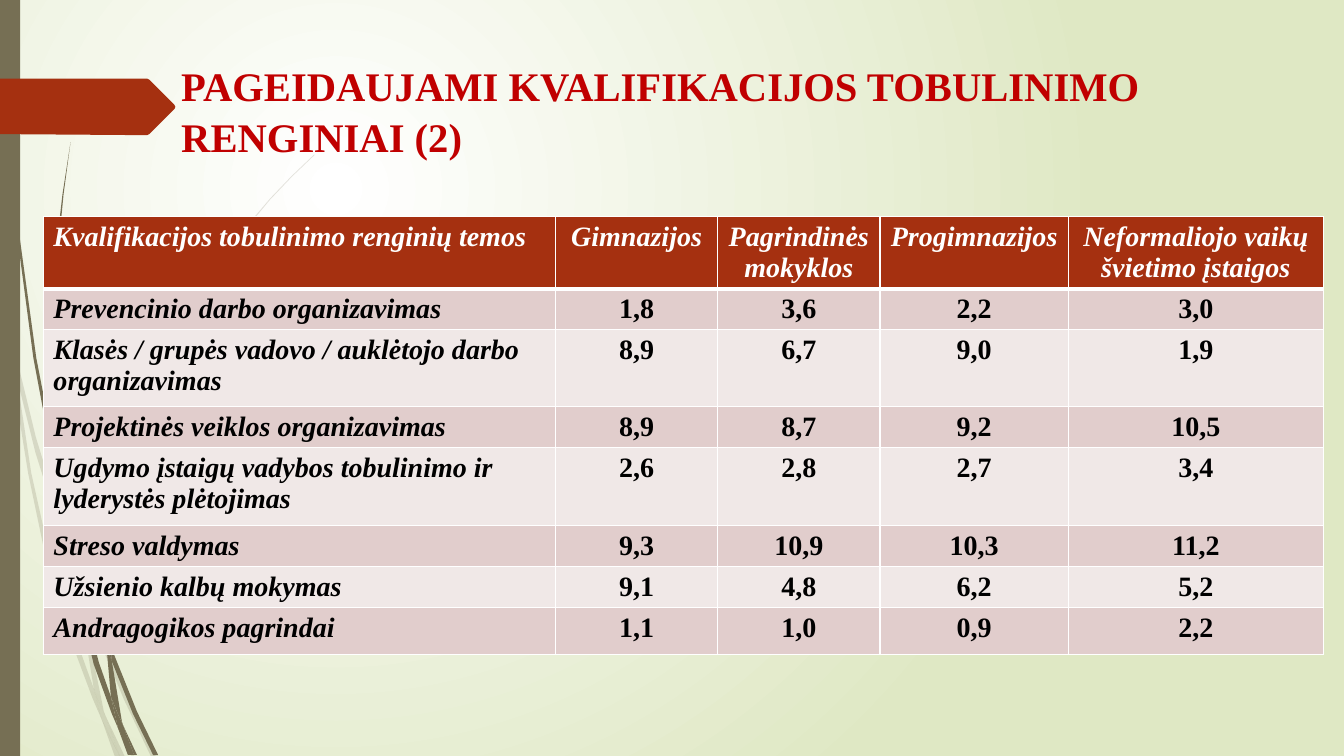
from dataclasses import dataclass
from pptx import Presentation, oxml, util as u
from pptx.dml.color import RGBColor
from pptx.enum import shapes, text
from pptx.oxml import ns


@dataclass
class Theme:
    """Colours and type sizes of the slide."""
    font: str = "Times New Roman"
    title: str = "C00000"
    accent: str = "A53010"
    stem: str = "766F54"
    glow: str = "FFFFFF"
    field: str = "DFE8C4"
    ink: str = "000000"
    rule: str = "FFFFFF"
    bands: tuple = ("E1CDCC", "F0E8E7")
    big: float = 29
    body: float = 20


class Deck:
    """Draws elements on one slide in the given theme."""

    def __init__(self, theme):
        self.theme = theme
        self.file = Presentation()
        self.file.slide_width, self.file.slide_height = u.Pt(960), u.Pt(540)
        self.slide = self.file.slides.add_slide(self.file.slide_layouts[6])

    def glow(self):
        """Fill the background with a round gradient."""
        fill = self.slide.background.fill
        fill.gradient()
        for stop, tint in zip(fill.gradient_stops, (self.theme.glow, self.theme.field)):
            stop.color.rgb = RGBColor.from_string(tint)
        grad = self.slide.element.find(".//" + ns.qn("a:gradFill"))
        grad.remove(grad.find(ns.qn("a:lin")))
        grad.append(oxml.parse_xml(
            f'<a:path {ns.nsdecls("a")} path="circle">'
            '<a:fillToRect l="50000" t="50000" r="100000" b="100000"/></a:path>'))

    def paint(self, shape, tint, alpha=100):
        """Give a shape a flat fill without line or shadow."""
        shape.shadow.inherit = False
        shape.line.fill.background()
        shape.fill.solid()
        shape.fill.fore_color.rgb = RGBColor.from_string(tint)
        if alpha < 100:
            clr = shape.element.spPr.find(f'{ns.qn("a:solidFill")}/{ns.qn("a:srgbClr")}')
            clr.append(oxml.parse_xml(f'<a:alpha {ns.nsdecls("a")} val="{alpha * 1000}"/>'))

    def bar(self, x, y, w, h, tint):
        """Add a plain rectangle."""
        shape = self.slide.shapes.add_shape(
            shapes.MSO_SHAPE.RECTANGLE, u.Pt(x), u.Pt(y), u.Pt(w), u.Pt(h))
        self.paint(shape, tint)

    def blade(self, dots, tint, alpha=100):
        """Add a closed outline through the dots."""
        first, *rest = [(u.Pt(x), u.Pt(y)) for x, y in dots]
        pen = self.slide.shapes.build_freeform(*first)
        pen.add_line_segments(rest, close=True)
        self.paint(pen.convert_to_shape(), tint, alpha)

    def type(self, para, size, tint, slant=False):
        """Set the font of a paragraph."""
        font = para.font
        font.name, font.size = self.theme.font, u.Pt(size)
        font.bold, font.italic = True, slant
        font.color.rgb = RGBColor.from_string(tint)

    def title(self, words, x, y, w, h):
        """Add the heading."""
        frame = self.slide.shapes.add_textbox(u.Pt(x), u.Pt(y), u.Pt(w), u.Pt(h)).text_frame
        frame.word_wrap = True
        frame.margin_top = u.Pt(5.5)
        frame.text = words
        para = frame.paragraphs[0]
        para.line_spacing = 1.05
        self.type(para, self.theme.big, self.theme.title)

    def edge(self, cell, base):
        """Rule the four sides of a cell."""
        props = cell._tc.get_or_add_tcPr()
        for spot, (side, width) in enumerate(zip("LRTB", (1, 1, 1, base))):
            props.insert(spot, oxml.parse_xml(
                f'<a:ln{side} {ns.nsdecls("a")} w="{u.Pt(width)}"><a:solidFill>'
                f'<a:srgbClr val="{self.theme.rule}"/></a:solidFill></a:ln{side}>'))

    def table(self, rows, x, y, wide, high):
        """Add a table with a dark head and banded rows."""
        grid = self.slide.shapes.add_table(
            len(rows), len(wide), u.Pt(x), u.Pt(y), u.Pt(sum(wide)), u.Pt(sum(high))).table
        for col, size in zip(grid.columns, wide):
            col.width = u.Pt(size)
        for line, size in zip(grid.rows, high):
            line.height = u.Pt(size)
        for r, row in enumerate(rows):
            head = r == 0
            for c, words in enumerate(row):
                cell = grid.cell(r, c)
                cell.text = words
                cell.margin_bottom = 0
                cell.fill.solid()
                cell.fill.fore_color.rgb = RGBColor.from_string(
                    self.theme.accent if head else self.theme.bands[(r - 1) % 2])
                para = cell.text_frame.paragraphs[0]
                para.alignment = text.PP_ALIGN.CENTER if c else text.PP_ALIGN.LEFT
                self.type(para, self.theme.body, self.theme.rule if head else self.theme.ink,
                          head or c == 0)
                self.edge(cell, 3 if head else 1)


PALE = [
    [(7.9, 252), (6.5, 231.8), (0, 203), (0, 215.3), (7.2, 247.7)],
    [(41.8, 375.8), (60.5, 431.3), (61.2, 421.9), (44.6, 374.4), (25.6, 312.2),
     (10.1, 248.4), (12.2, 270.7), (25.4, 323.5)],
    [(66.2, 437), (63.4, 429.1), (63.4, 439.2), (88.6, 499.7), (108, 540.7),
     (111.6, 540.7), (91.4, 498.2)],
    [(85.7, 540.7), (89.3, 540.7), (75.6, 511.9)],
    [(67, 491.8), (50.4, 445.7), (34.5, 392.4), (22.3, 337.7), (12.2, 270.7), (7.9, 252),
     (13.2, 295.2), (20.2, 338.4), (31.6, 393.1), (46.8, 447.1), (66.2, 499),
     (72.7, 514.1), (71.3, 509)],
    [(60.5, 431.3), (62.6, 465.1), (67, 491.8), (69.1, 498.2), (75.6, 511.9),
     (74.2, 508.3), (65.5, 465.1), (63.4, 439.2), (63.4, 437.8)],
    [(63.4, 420.5), (68.6, 375.8), (79.2, 332.6), (95.3, 290.9), (115.2, 251.3),
     (138.2, 213.1), (164.9, 176.4), (193, 142.6), (208.8, 126), (224.6, 110.9),
     (224.6, 110.2), (208.1, 126), (193, 141.8), (164.2, 175.7), (137.2, 212.4),
     (113.8, 250.6), (93.2, 290.2), (77, 331.9), (65.9, 375.8), (61.2, 420.5),
     (61.2, 421.9), (63.4, 429.1)],
    [(72.7, 514.1), (82.1, 540.7), (85.7, 540.7)],
    [(63.4, 437.8), (63.4, 439.2), (63.4, 429.1), (61.2, 421.9), (60.5, 431.3)],
    [(69.1, 498.2), (67, 491.8), (71.3, 509), (72.7, 514.1), (85.7, 540.7), (75.6, 511.9)],
]
DARK = [
    [(5, 79.2), (12.2, 167.8), (23.8, 255.6), (40.3, 343.4), (41, 346.3), (39.6, 329),
     (39.6, 326.2), (25.9, 255.6), (13.7, 167), (5.8, 78.5), (3.6, 34.6), (2.9, 0),
     (2.2, 0), (2.9, 34.6)],
    [(63.4, 426.2), (76.3, 464.4), (76.3, 454.3), (67, 424.8), (43.2, 339.8), (46.1, 363.6)],
    [(81.4, 467.3), (79.2, 461.5), (79.9, 472.3), (95, 509.8), (109.4, 539.3),
     (113, 539.3), (97.9, 508.3)],
    [(79.2, 497.5), (70.6, 473), (51.8, 400.3), (46.1, 363.6), (41, 343.4), (49, 401),
     (67, 474.5), (79.9, 509.8), (84.2, 519.8), (83.5, 516.2)],
    [(43.2, 339.8), (41.8, 326.2), (38.9, 251.3), (41.8, 176.4), (45.4, 139),
     (50.4, 101.5), (44.6, 139), (40.3, 176.4), (37.4, 251.3), (39.6, 323.3)],
    [(95.8, 539.3), (97.9, 539.3), (87.8, 517.7)],
    [(41, 343.4), (46.1, 363.6), (43.2, 339.8), (39.6, 323.3), (39.6, 326.2)],
    [(79.9, 455.8), (90, 397.4), (113.8, 342.7), (147.6, 292.3), (166.3, 269.3),
     (187.9, 247.7), (187.2, 247.7), (166.3, 268.6), (146.9, 291.6), (112.3, 341.3),
     (87.8, 396.7), (76.3, 454.3), (79.2, 461.5)],
    [(84.2, 519.8), (91.4, 539.3), (94.3, 539.3)],
    [(76.3, 464.4), (79.2, 497.5), (83.5, 508.3), (87.8, 517.7), (87.1, 515.5),
     (79.9, 472.3), (78.5, 468.7)],
    [(76.3, 464.4), (78.5, 468.7), (79.9, 472.3), (79.2, 461.5), (76.3, 454.3)],
    [(83.5, 508.3), (79.2, 497.5), (83.5, 516.2), (84.2, 519.8), (93.6, 539.3),
     (95.8, 539.3), (87.8, 517.7)],
]
ARROW = [(124.7, 77.8), (106.6, 95.8), (105.1, 96.5), (97.9, 96.5), (0, 95.8), (0, 56.2),
         (105.1, 56.2), (106.6, 56.9), (124.6, 74.9), (125.3, 76.3)]
ROWS = [
    ("Kvalifikacijos tobulinimo renginių temos", "Gimnazijos", "Pagrindinės mokyklos",
     "Progimnazijos", "Neformaliojo vaikų švietimo įstaigos"),
    ("Prevencinio darbo organizavimas", "1,8", "3,6", "2,2", "3,0"),
    ("Klasės / grupės vadovo / auklėtojo darbo organizavimas", "8,9", "6,7", "9,0", "1,9"),
    ("Projektinės veiklos organizavimas", "8,9", "8,7", "9,2", "10,5"),
    ("Ugdymo įstaigų vadybos tobulinimo ir lyderystės plėtojimas", "2,6", "2,8", "2,7", "3,4"),
    ("Streso valdymas", "9,3", "10,9", "10,3", "11,2"),
    ("Užsienio kalbų mokymas", "9,1", "4,8", "6,2", "5,2"),
    ("Andragogikos pagrindai", "1,1", "1,0", "0,9", "2,2"),
]


def main():
    """Build and save the slide."""
    theme = Theme()
    deck = Deck(theme)
    deck.glow()
    for blades, alpha in ((PALE, 20), (DARK, 100)):
        for dots in blades:
            deck.blade(dots, theme.stem, alpha)
    deck.bar(0, 0, 14.4, 540, theme.stem)
    deck.blade(ARROW, theme.accent)
    deck.table(ROWS, 31, 154.8, (365.8, 115.9, 115.9, 134.6, 182.2),
               (51.4, 29.3, 55, 29.3, 55.4, 29.3, 29.3, 33.6))
    deck.title("PAGEIDAUJAMI KVALIFIKACIJOS TOBULINIMO RENGINIAI (2)", 122.4, 36, 712.8, 76.3)
    deck.file.save("out.pptx")


if __name__ == "__main__":
    main()
